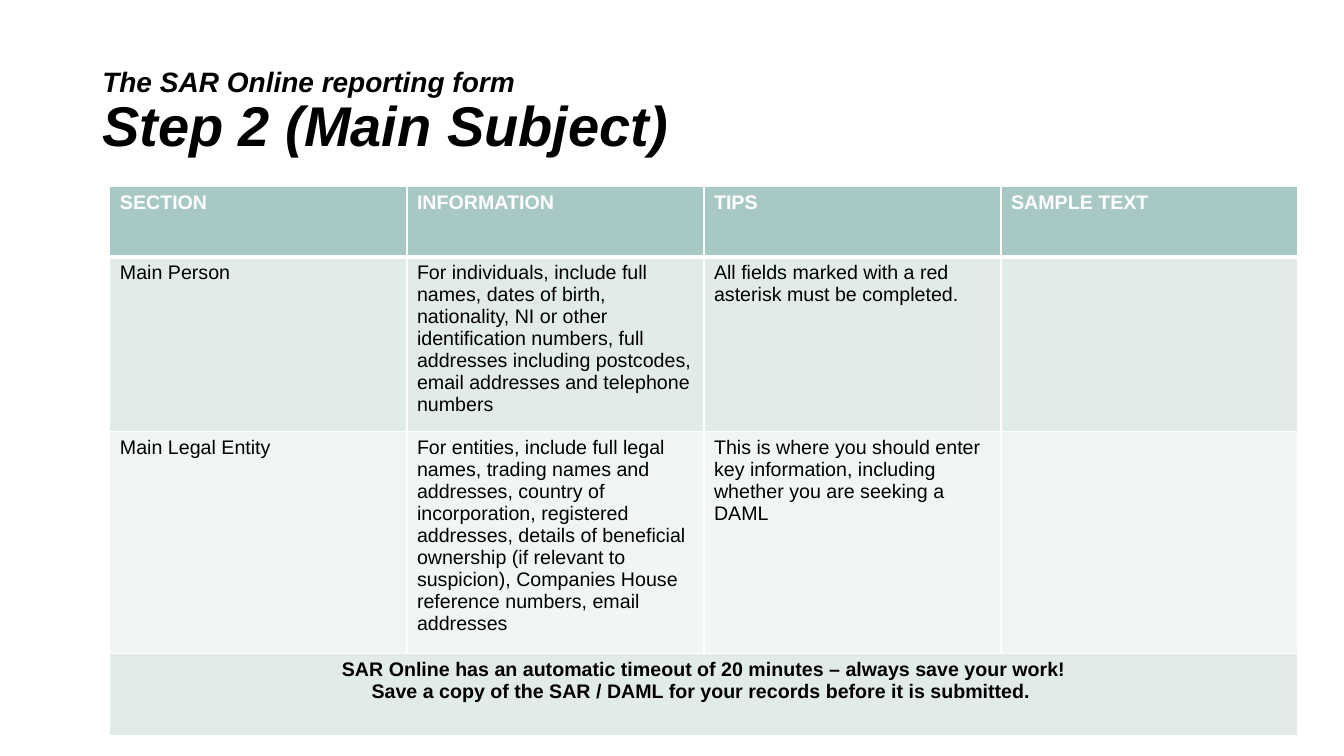
from dataclasses import dataclass

from lxml.etree import SubElement
from pptx import Presentation
from pptx.dml.color import RGBColor
from pptx.enum.text import MSO_ANCHOR, PP_ALIGN
from pptx.oxml.ns import qn
from pptx.util import Pt


@dataclass(frozen=True)
class Theme:
    """Colours, font and type sizes of the slide."""
    font: str = "Arial"
    black: str = "000000"
    white: str = "FFFFFF"
    header_fill: str = "A7C8C4"
    dark_band: str = "E1EBEA"
    light_band: str = "F1F5F5"
    overline_size: int = 20
    title_size: int = 40
    table_size: int = 14
    thin_border: int = 1
    thick_border: int = 3


class SlideBuilder:
    """Adds styled elements to one slide."""

    def __init__(self, slide, theme):
        """Keep the slide and its theme."""
        self.slide = slide
        self.theme = theme

    def add_run(self, paragraph, text, size, color, bold=False, italic=False):
        """Append one styled run to a paragraph."""
        run = paragraph.add_run()
        run.text = text
        font = run.font
        font.name, font.size = self.theme.font, Pt(size)
        font.bold, font.italic = bold, italic
        font.color.rgb = RGBColor.from_string(color)

    def add_title(self, overline, title, left, top, width, height):
        """Add the two-line slide title."""
        theme = self.theme
        shape = self.slide.shapes.add_textbox(Pt(left), Pt(top), Pt(width), Pt(height))
        frame = shape.text_frame
        frame.word_wrap = True
        frame.vertical_anchor = MSO_ANCHOR.MIDDLE
        paragraph = frame.paragraphs[0]
        paragraph.line_spacing = 0.9
        self.add_run(paragraph, overline, theme.overline_size, theme.black, True, True)
        paragraph.add_line_break()
        self.add_run(paragraph, title, theme.title_size, theme.black, True, True)

    def add_borders(self, cell, top, bottom):
        """Draw white lines on all four sides of a cell."""
        thin = self.theme.thin_border
        properties = cell._tc.get_or_add_tcPr()
        sides = (("a:lnL", thin), ("a:lnR", thin), ("a:lnT", top), ("a:lnB", bottom))
        for position, (tag, weight) in enumerate(sides):
            line = SubElement(properties, qn(tag), w=str(Pt(weight)))
            fill = SubElement(line, qn("a:solidFill"))
            SubElement(fill, qn("a:srgbClr"), val=self.theme.white)
            properties.insert(position, line)

    def fill_cell(self, cell, text, color, bold, alignment):
        """Write a cell, one paragraph for each line of text."""
        frame = cell.text_frame
        for index, line in enumerate(text.split("\n")):
            paragraph = frame.add_paragraph() if index else frame.paragraphs[0]
            paragraph.alignment = alignment
            self.add_run(paragraph, line, self.theme.table_size, color, bold)

    def add_table(self, rows, row_heights, left, top, column_width):
        """Add a banded table whose last row spans all columns."""
        theme = self.theme
        last, column_count = len(rows) - 1, len(rows[0])
        table = self.slide.shapes.add_table(
            len(rows), column_count, Pt(left), Pt(top),
            Pt(column_width * column_count), Pt(sum(row_heights))).table
        for column in table.columns:
            column.width = Pt(column_width)
        table.cell(last, 0).merge(table.cell(last, column_count - 1))
        for row_index, texts in enumerate(rows):
            table.rows[row_index].height = Pt(row_heights[row_index])
            is_header, is_footer = row_index == 0, row_index == last
            band = theme.dark_band if row_index % 2 else theme.light_band
            top_border = theme.thick_border if row_index == 1 else theme.thin_border
            bottom_border = theme.thick_border if is_header else theme.thin_border
            for column_index in range(column_count):
                cell = table.cell(row_index, column_index)
                cell.fill.solid()
                cell.fill.fore_color.rgb = RGBColor.from_string(
                    theme.header_fill if is_header else band)
                self.add_borders(cell, top_border, bottom_border)
                if column_index < len(texts):
                    self.fill_cell(
                        cell, texts[column_index],
                        theme.white if is_header else theme.black,
                        is_header or is_footer,
                        PP_ALIGN.CENTER if is_footer else PP_ALIGN.LEFT)


ROWS = [
    ["SECTION", "INFORMATION", "TIPS", "SAMPLE TEXT"],
    ["Main Person",
     "For individuals, include full names, dates of birth, nationality, NI or other "
     "identification numbers, full addresses including postcodes, email addresses "
     "and telephone numbers",
     "All fields marked with a red asterisk must be completed."],
    ["Main Legal Entity",
     "For entities, include full legal names, trading names and addresses, country of "
     "incorporation, registered addresses, details of beneficial ownership (if relevant "
     "to suspicion), Companies House reference numbers, email addresses",
     "This is where you should enter key information, including whether you are "
     "seeking a DAML"],
    ["SAR Online has an automatic timeout of 20 minutes – always save your work!\n"
     "Save a copy of the SAR / DAML for your records before it is submitted. "],
]


def main():
    """Build and save the presentation."""
    presentation = Presentation()
    presentation.slide_width, presentation.slide_height = Pt(960), Pt(540)
    slide = presentation.slides.add_slide(presentation.slide_layouts[6])
    builder = SlideBuilder(slide, Theme())
    builder.add_title("The SAR Online reporting form", "Step 2 (Main Subject)",
                      66, 28.8, 861, 104.4)
    builder.add_table(ROWS, [50.4, 104.4, 141.8, 58.3], 78.5, 133, 212.2)
    presentation.save("out.pptx")


if __name__ == "__main__":
    main()
